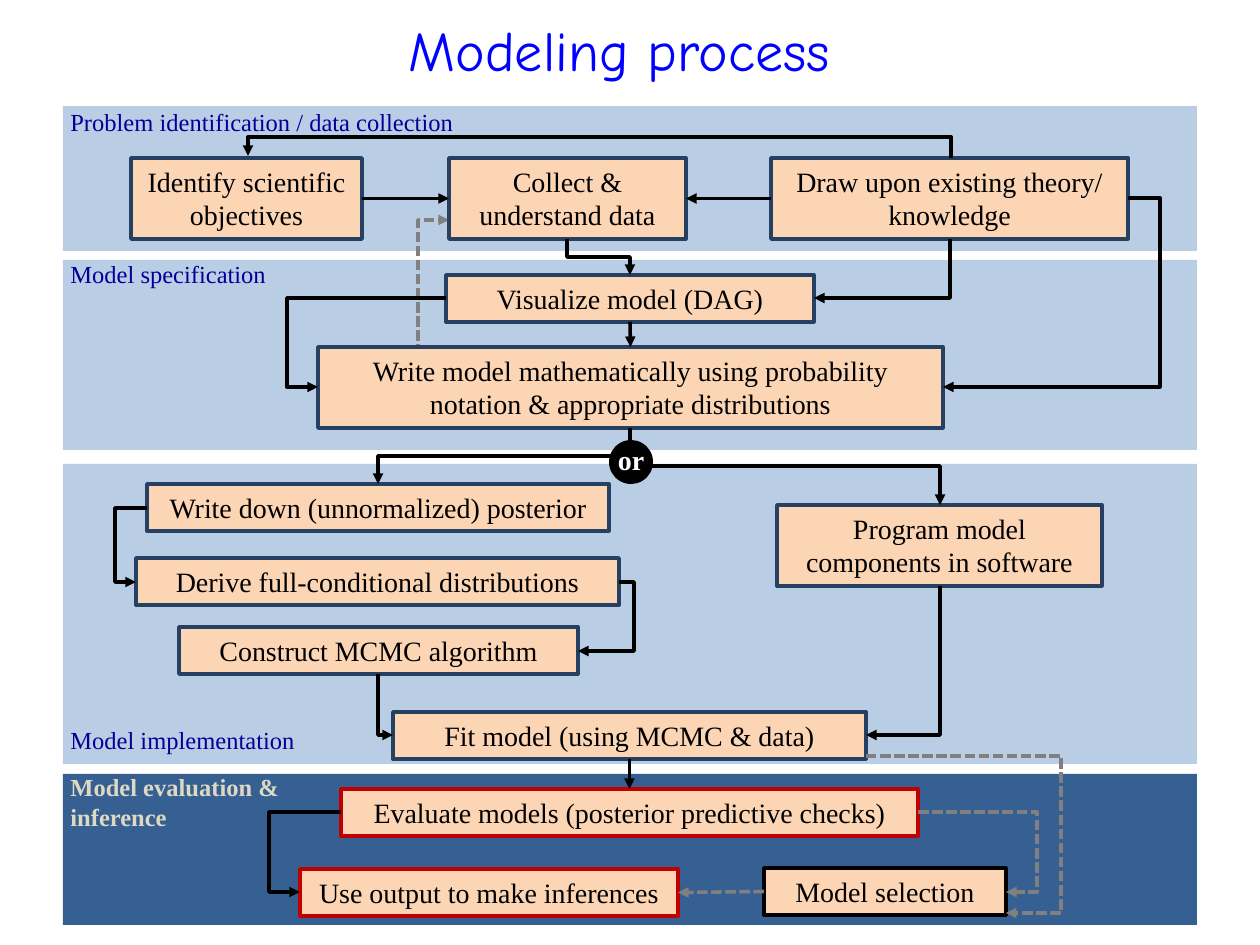
from dataclasses import dataclass
from typing import Any, Optional

from lxml import etree
from pptx import Presentation
from pptx import util as u
from pptx.dml.color import RGBColor
from pptx.enum import dml, shapes, text
from pptx.oxml import ns

EMU_PER_PX = 914400 / 126
COLORS = {
    "title": "0000FF", "band": "B9CDE5", "dark_band": "376092",
    "box": "FCD5B5", "navy": "254061", "red": "C00000", "black": "000000",
    "gray": "808080", "label": "000099", "light_label": "DDD9C3", "white": "FFFFFF",
}
TOP, LEFT, BOTTOM, RIGHT = range(4)
SERIF = "Times New Roman"
GROWING = {"auto_size": text.MSO_AUTO_SIZE.SHAPE_TO_FIT_TEXT,
           "vertical_anchor": text.MSO_ANCHOR.TOP}
ROUND_MARK = {"vertical_anchor": text.MSO_ANCHOR.MIDDLE, "word_wrap": True,
              "margin_left": 0, "margin_right": 0, "margin_top": 0,
              "margin_bottom": u.Inches(0.05)}


@dataclass
class Area:
    left: int
    top: int
    width: int
    height: int
    color: str
    words: str = ""


@dataclass
class Link:
    source: str
    source_side: int
    target: str
    target_side: int
    color: str = "black"


@dataclass
class Elbow:
    """A bend of None makes a single corner; otherwise it places the middle leg."""
    start: tuple[int, int]
    end: tuple[int, int]
    bend: Optional[int] = None
    vertical_first: bool = True
    color: str = "black"


BANDS = [
    Area(63, 774, 1134, 151, "dark_band"),
    Area(63, 464, 1134, 300, "band"),
    Area(63, 260, 1134, 190, "band"),
    Area(63, 106, 1134, 145, "band"),
]
LABELS = [
    Area(58, 101, 418, 43, "label", "Problem identification / data collection"),
    Area(58, 253, 223, 43, "label", "Model specification"),
    Area(58, 719, 252, 43, "label", "Model implementation"),
    Area(58, 766, 236, 72, "light_label", "Model evaluation &\vinference"),
]
BOXES = {
    "objectives": Area(131, 158, 231, 81, "navy", "Identify scientific objectives"),
    "data": Area(449, 158, 237, 81, "navy", "Collect & understand data"),
    "theory": Area(771, 158, 357, 81, "navy", "Draw upon existing theory/\vknowledge"),
    "visualize": Area(446, 275, 368, 47, "navy", "Visualize model (DAG)"),
    "mathematics": Area(318, 347, 625, 81, "navy", "Write model mathematically using "
                        "probability notation & appropriate distributions"),
    "posterior": Area(147, 484, 462, 47, "navy", "Write down (unnormalized) posterior"),
    "conditionals": Area(136, 558, 483, 47, "navy", "Derive full-conditional distributions"),
    "algorithm": Area(179, 627, 399, 47, "navy", "Construct MCMC algorithm"),
    "software": Area(777, 505, 325, 81, "navy", "Program model components in software"),
    "fit": Area(393, 712, 473, 47, "navy", "Fit model (using MCMC & data)"),
    "evaluate": Area(341, 789, 577, 47, "red", "Evaluate models (posterior predictive checks)"),
    "inferences": Area(300, 869, 378, 47, "red", "Use output to make inferences"),
    "selection": Area(764, 868, 242, 47, "black", "Model selection"),
}
OR_MARK = Area(609, 440, 44, 44, "black", "or")
LINKS = [
    Link("objectives", RIGHT, "data", LEFT),
    Link("theory", LEFT, "data", RIGHT),
    Link("visualize", BOTTOM, "mathematics", TOP),
    Link("fit", BOTTOM, "evaluate", TOP),
    Link("selection", LEFT, "inferences", RIGHT, "gray"),
]
FEEDBACK = Elbow((318, 410), (449, 220), 418, False, "gray")
ELBOWS = [
    Elbow((951, 158), (248, 156), 137),
    Elbow((567, 239), (630, 275), 257),
    Elbow((950, 239), (814, 298)),
    Elbow((1128, 198), (943, 387), 1160, False),
    Elbow((446, 298), (318, 387), 287, False),
    Elbow((630, 428), (940, 505), 466),
    Elbow((630, 428), (378, 484), 456),
    Elbow((147, 508), (136, 582), 115, False),
    Elbow((619, 582), (578, 651), 634, False),
    Elbow((378, 674), (393, 735)),
    Elbow((940, 586), (866, 735)),
    Elbow((341, 812), (300, 892), 269, False),
    Elbow((918, 812), (1006, 892), 1037, False, "gray"),
    Elbow((866, 756), (1006, 913), 1061, False, "gray"),
]


def px(*lengths: float) -> list[int]:
    return [round(length * EMU_PER_PX) for length in lengths]


def rgb(name: str) -> RGBColor:
    return RGBColor.from_string(COLORS[name])


def apply(target: Any, values: dict[str, Any]) -> None:
    for name, value in values.items():
        setattr(target, name, value)


def write(shape: Any, words: str, color: str, font: dict[str, Any], frame: dict[str, Any],
          alignment: Any = text.PP_ALIGN.CENTER) -> None:
    apply(shape.text_frame, frame)
    paragraph = shape.text_frame.paragraphs[0]
    paragraph.text = words
    paragraph.alignment = alignment
    for run in paragraph.runs:
        apply(run.font, font)
        run.font.color.rgb = rgb(color)


def add_area(slide: Any, area: Area, fill: str, line: Optional[str] = None,
             kind: Any = shapes.MSO_SHAPE.RECTANGLE) -> Any:
    shape = slide.shapes.add_shape(kind, *px(area.left, area.top, area.width, area.height))
    shape.shadow.inherit = False
    shape.fill.solid()
    shape.fill.fore_color.rgb = rgb(fill)
    if line:
        shape.line.color.rgb = rgb(line)
        shape.line.width = u.Pt(2)
    else:
        shape.line.fill.background()
    return shape


def add_box(slide: Any, box: Area) -> Any:
    shape = add_area(slide, box, "box", box.color)
    write(shape, box.words, "black", {"name": SERIF, "size": u.Pt(16)},
          {**GROWING, "word_wrap": True})
    return shape


def add_label(slide: Any, label: Area) -> None:
    shape = slide.shapes.add_textbox(*px(label.left, label.top, label.width, label.height))
    font = {"name": SERIF, "size": u.Pt(14), "bold": label.color == "light_label"}
    write(shape, label.words, label.color, font, {**GROWING, "word_wrap": False},
          text.PP_ALIGN.LEFT)


def style_arrow(connector: Any, color: str) -> None:
    connector.line.color.rgb = rgb(color)
    connector.line.width = u.Pt(2)
    if color == "gray":
        connector.line.dash_style = dml.MSO_LINE.SQUARE_DOT
    properties = connector._element.spPr
    etree.SubElement(properties.find(ns.qn("a:ln")), ns.qn("a:tailEnd"), type="triangle")
    etree.SubElement(properties, ns.qn("a:effectLst"))


def add_link(slide: Any, link: Link, boxes: dict[str, Any]) -> None:
    connector = slide.shapes.add_connector(shapes.MSO_CONNECTOR.STRAIGHT, 0, 0, 0, 0)
    connector.begin_connect(boxes[link.source], link.source_side)
    connector.end_connect(boxes[link.target], link.target_side)
    style_arrow(connector, link.color)


def add_elbow(slide: Any, elbow: Elbow) -> None:
    """Vertical-first elbows are laid out sideways and given a quarter turn."""
    (x0, y0), (x1, y1) = elbow.start, elbow.end
    ends, origin, span = (x0, y0, x1, y1), x0, x1 - x0
    turn = 1 if x1 < x0 and y1 > y0 else -1
    if elbow.vertical_first:
        x, y = (x0 + x1) / 2, (y0 + y1) / 2
        across, along = turn * (x1 - x0) / 2, turn * (y1 - y0) / 2
        ends, origin, span = (x - along, y + across, x + along, y - across), y0, y1 - y0
    connector = slide.shapes.add_connector(shapes.MSO_CONNECTOR.ELBOW, *px(*ends))
    properties = connector._element.spPr
    if elbow.vertical_first:
        properties.find(ns.qn("a:xfrm")).set("rot", str(turn * 90 % 360 * 60000))
    geometry = properties.find(ns.qn("a:prstGeom"))
    if elbow.bend is None:
        geometry.set("prst", "bentConnector2")
    else:
        share = round((elbow.bend - origin) / span * 100000)
        guides = geometry.get_or_add_avLst()
        etree.SubElement(guides, ns.qn("a:gd"), name="adj1", fmla=f"val {share}")
    style_arrow(connector, elbow.color)


def main() -> None:
    presentation = Presentation()
    apply(presentation, {"slide_width": u.Inches(10), "slide_height": u.Inches(7.5)})
    slide = presentation.slides.add_slide(presentation.slide_layouts[5])
    title = slide.shapes.title
    apply(title, dict(zip(("left", "top", "width", "height"), px(84, 11, 1071, 77))))
    write(title, "Modeling process", "title", {"name": "Comic Neue", "size": u.Pt(32)},
          {"vertical_anchor": text.MSO_ANCHOR.MIDDLE})
    for band in BANDS:
        add_area(slide, band, band.color)
    add_elbow(slide, FEEDBACK)
    boxes = {name: add_box(slide, box) for name, box in BOXES.items()}
    for link in LINKS:
        add_link(slide, link, boxes)
    for elbow in ELBOWS:
        add_elbow(slide, elbow)
    for label in LABELS:
        add_label(slide, label)
    mark = add_area(slide, OR_MARK, OR_MARK.color, kind=shapes.MSO_SHAPE.OVAL)
    write(mark, OR_MARK.words, "white", {"name": SERIF, "size": u.Pt(16), "bold": True},
          ROUND_MARK)
    presentation.save("out.pptx")


if __name__ == "__main__":
    main()
